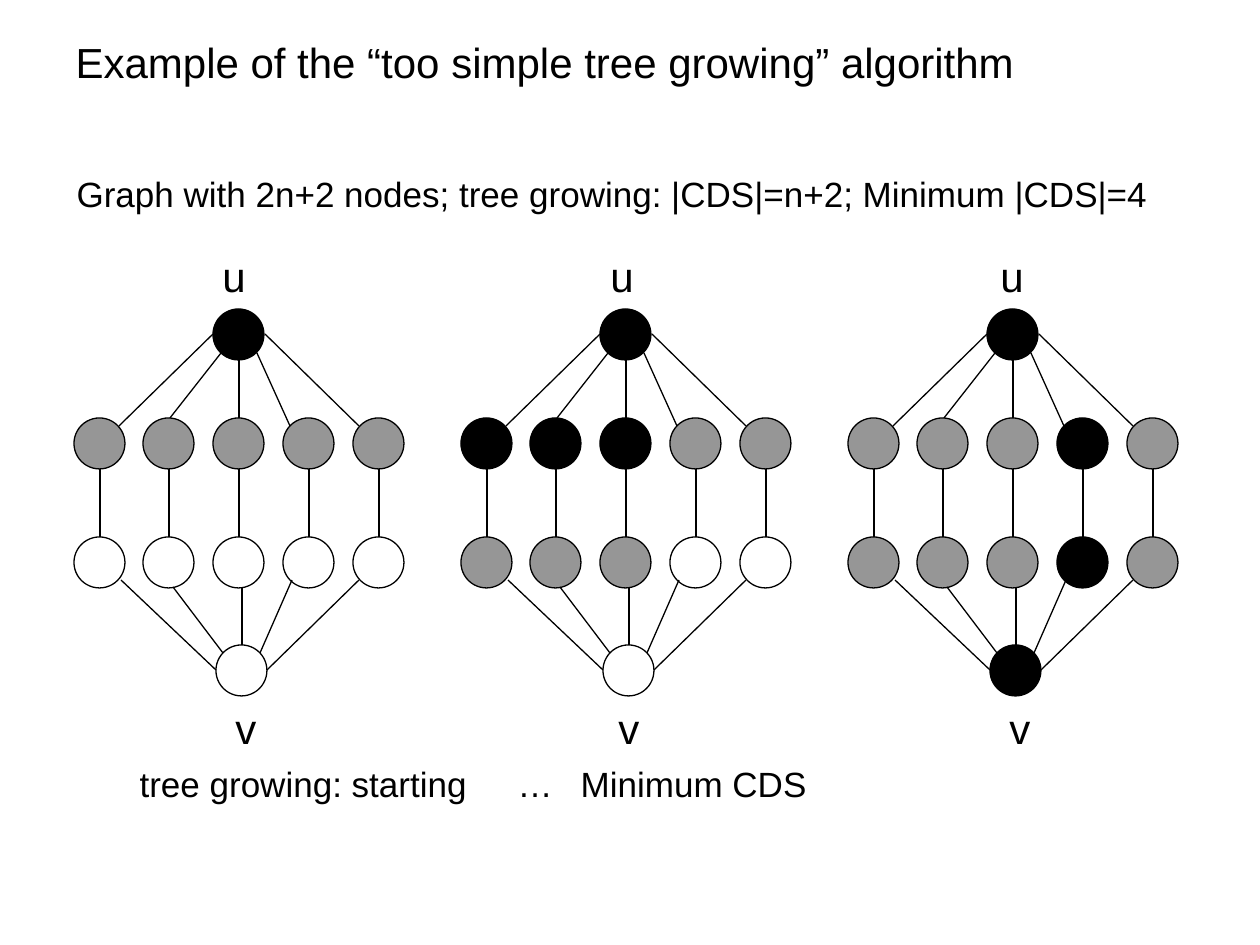
from lxml import etree
from pptx import Presentation
from pptx import util as u
from pptx.dml.color import RGBColor
from pptx.enum import shapes, text
from pptx.oxml import ns

BLACK = RGBColor(0x00, 0x00, 0x00)
GREY = RGBColor(0x96, 0x96, 0x96)
FILLS = {"B": BLACK, "G": GREY}

NODE = 51
GRAPH_PITCH = 387
FIRST_NODE = 74
ROW_SPAN = 279
UPPER_ROW, LOWER_ROW = 418, 537
GRAPHS = [
    ("GGGGG", "WWWWW", "W", 210, 223),
    ("BBBGG", "GGGWW", "W", 598, 606),
    ("GGGBG", "GGGBG", "B", 988, 997),
]
ROOT_EDGES = [
    (119, 426, 213, 334), (170, 418, 221, 353), (239, 418, 239, 359),
    (257, 353, 290, 426), (265, 334, 359, 426),
]
SINK_EDGES = [
    (121, 580, 216, 670), (173, 587, 223, 653), (242, 587, 242, 645),
    (260, 653, 292, 580), (267, 670, 359, 580),
]


def px(*lengths):
    return [u.Emu(round(n * 914400 / 126)) for n in lengths]


def style_font(paragraph, size):
    paragraph.font.size = u.Pt(size)
    paragraph.font.name = "Arial"
    paragraph.font.color.rgb = BLACK


prs = Presentation()
prs.slide_width, prs.slide_height = px(1260, 945)
slide = prs.slides.add_slide(prs.slide_layouts[1])

title = slide.shapes.title
title.left, title.top, title.width, title.height = px(63, 28, 1134, 68)
title.text_frame.text = "Example of the “too simple tree growing” algorithm"
title.text_frame.vertical_anchor = text.MSO_ANCHOR.MIDDLE
title.text_frame.auto_size = text.MSO_AUTO_SIZE.NONE
heading = title.text_frame.paragraphs[0]
heading.alignment = text.PP_ALIGN.LEFT
style_font(heading, 24)

body = slide.placeholders[1]
body.left, body.top, body.width, body.height = px(64, 115, 1131, 736)
body.text_frame.auto_size = text.MSO_AUTO_SIZE.NONE
body.text_frame.margin_top = px(58)[0]
summary = body.text_frame.paragraphs[0]
summary.text = "Graph with 2n+2 nodes; tree growing: |CDS|=n+2; Minimum |CDS|=4"
captions = body.text_frame.add_paragraph()
captions.text = "\ttree growing: starting\t…\tMinimum CDS"
for paragraph, space, stops in ((summary, 0, ()), (captions, 313, (20, 542, 820))):
    paragraph.space_before = u.Pt(space)
    properties = paragraph._p.get_or_add_pPr()
    properties.set("marL", "0")
    properties.set("indent", "0")
    etree.SubElement(properties, ns.qn("a:buNone"))
    if stops:
        tabs = etree.SubElement(properties, ns.qn("a:tabLst"))
        for stop in px(*stops):
            etree.SubElement(tabs, ns.qn("a:tab"), pos=str(stop), algn="l")
    style_font(paragraph, 20)

for index, (upper, lower, sink, root_label, sink_label) in enumerate(GRAPHS):
    shift = index * GRAPH_PITCH
    columns = [FIRST_NODE + ROW_SPAN * i // 4 for i in range(5)]
    nodes = [(213, 309, "B"), (216, 645, sink)]
    nodes += [(x, UPPER_ROW, state) for x, state in zip(columns, upper)]
    nodes += [(x, LOWER_ROW, state) for x, state in zip(columns, lower)]
    for x, y, state in nodes:
        node = slide.shapes.add_shape(
            shapes.MSO_SHAPE.OVAL, *px(x + shift, y, NODE, NODE))
        node.shadow.inherit = False
        if state in FILLS:
            node.fill.solid()
            node.fill.fore_color.rgb = FILLS[state]
        else:
            node.fill.background()
        node.line.color.rgb = BLACK
        node.line.width = u.Pt(0.75)

    rungs = [(x + 26, UPPER_ROW + NODE, x + 26, LOWER_ROW) for x in columns]
    for x1, y1, x2, y2 in ROOT_EDGES + rungs + SINK_EDGES:
        edge = slide.shapes.add_connector(
            shapes.MSO_CONNECTOR.STRAIGHT, *px(x1 + shift, y1, x2 + shift, y2))
        edge.line.color.rgb = BLACK
        edge.line.width = u.Pt(0.75)
        etree.SubElement(edge._element.spPr, ns.qn("a:effectLst"))

    for letter, x, y in (("u", root_label, 244), ("v", sink_label, 696)):
        label = slide.shapes.add_textbox(*px(x, y, 45, 54))
        label.text_frame.word_wrap = False
        label.text_frame.text = letter
        style_font(label.text_frame.paragraphs[0], 24)

prs.save("out.pptx")
